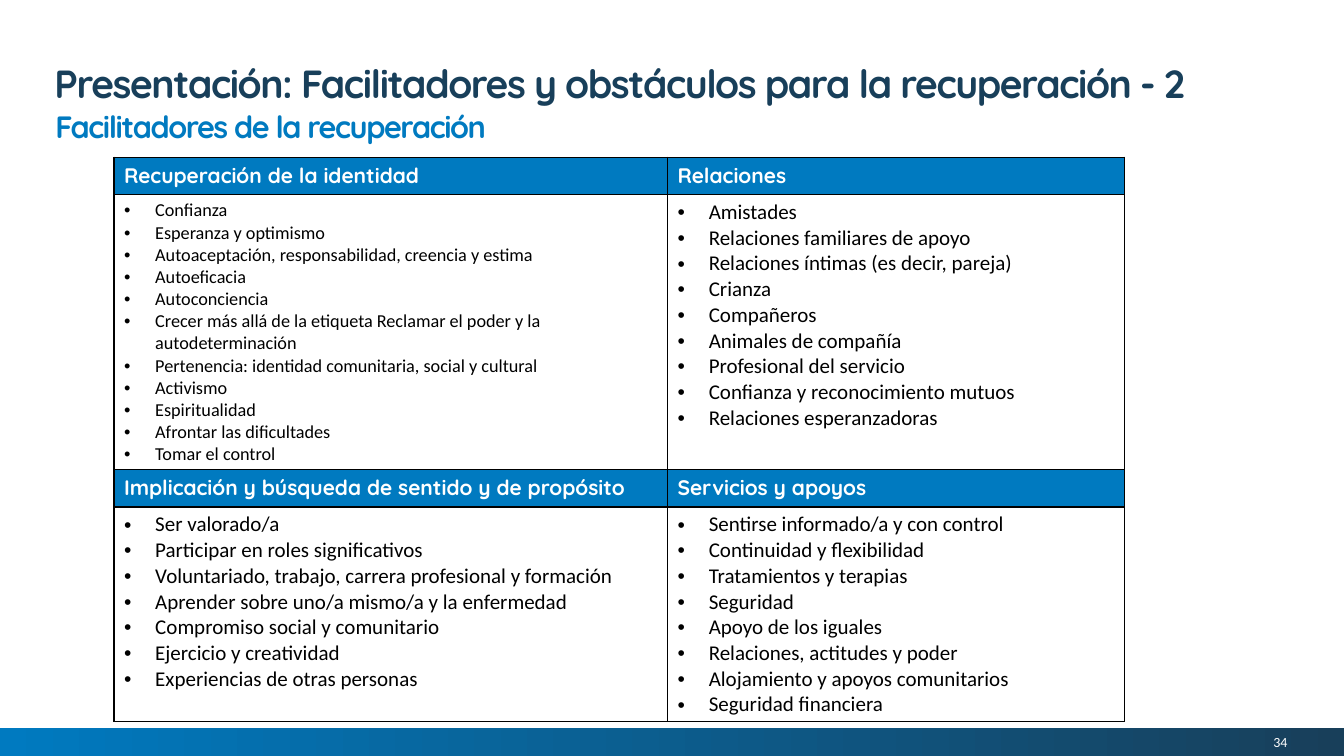
"""Builds the slide on facilitators of recovery."""
from lxml.etree import SubElement
from pptx import Presentation
from pptx.dml.color import RGBColor
from pptx.enum.shapes import MSO_SHAPE
from pptx.enum.text import MSO_ANCHOR, PP_ALIGN
from pptx.oxml.ns import qn
from pptx.util import Inches, Pt

BLUE = RGBColor(0x00, 0x7A, 0xC0)
NAVY = RGBColor(0x18, 0x3F, 0x5A)
WHITE = RGBColor(0xFF, 0xFF, 0xFF)
BLACK = RGBColor(0x00, 0x00, 0x00)

TITLE = "Presentación: Facilitadores y obstáculos para la recuperación - 2"
SUBTITLE = "Facilitadores de la recuperación"
PAGE_NUMBER = "34"
TOPICS = [
    [
        ("Recuperación de la identidad", 13, [
            "Confianza",
            "Esperanza y optimismo",
            "Autoaceptación, responsabilidad, creencia y estima",
            "Autoeficacia",
            "Autoconciencia",
            "Crecer más allá de la etiqueta Reclamar el poder y la autodeterminación",
            "Pertenencia: identidad comunitaria, social y cultural",
            "Activismo",
            "Espiritualidad",
            "Afrontar las dificultades",
            "Tomar el control",
        ]),
        ("Relaciones", 15, [
            "Amistades",
            "Relaciones familiares de apoyo",
            "Relaciones íntimas (es decir, pareja)",
            "Crianza",
            "Compañeros",
            "Animales de compañía",
            "Profesional del servicio",
            "Confianza y reconocimiento mutuos",
            "Relaciones esperanzadoras",
        ]),
    ],
    [
        ("Implicación y búsqueda de sentido y de propósito", 15, [
            "Ser valorado/a",
            "Participar en roles significativos",
            "Voluntariado, trabajo, carrera profesional y formación",
            "Aprender sobre uno/a mismo/a y la enfermedad",
            "Compromiso social y comunitario",
            "Ejercicio y creatividad",
            "Experiencias de otras personas",
        ]),
        ("Servicios y apoyos", 15, [
            "Sentirse informado/a y con control",
            "Continuidad y flexibilidad",
            "Tratamientos y terapias",
            "Seguridad",
            "Apoyo de los iguales",
            "Relaciones, actitudes y poder",
            "Alojamiento y apoyos comunitarios",
            "Seguridad financiera",
        ]),
    ],
]
COLUMN_WIDTHS = [5.49, 4.53]
ROW_HEIGHTS = [0.37, 2.73, 0.37, 2.13]


def write(frame, lines, size, color, font="Calibri", bold=False, bullet=False,
          spacing=None, leading=None, align=PP_ALIGN.LEFT):
    """Fill a text frame with one paragraph per line."""
    for index, line in enumerate(lines):
        para = frame.add_paragraph() if index else frame.paragraphs[0]
        para.alignment = align
        if leading:
            para.line_spacing = Pt(leading)
        if bullet:
            properties = para._p.get_or_add_pPr()
            properties.set("marL", str(Inches(0.31)))
            properties.set("indent", str(Inches(-0.31)))
            SubElement(properties, qn("a:buFont"), typeface="Arial")
            SubElement(properties, qn("a:buChar"), char="•")
        span = para.add_run()
        span.text = line
        span.font.name = font
        span.font.size = Pt(size)
        span.font.bold = bold
        span.font.color.rgb = color
        if spacing:
            span._r.get_or_add_rPr().set("spc", str(spacing))


def add_text(page, text, left, top, width, height, anchor, inset=True, **style):
    """Place a wrapped text box."""
    box = page.shapes.add_textbox(Inches(left), Inches(top), Inches(width), Inches(height))
    frame = box.text_frame
    frame.word_wrap = True
    frame.vertical_anchor = anchor
    if not inset:
        frame.margin_left = frame.margin_right = 0
        frame.margin_top = frame.margin_bottom = 0
    write(frame, [text], **style)


def outline(cell):
    """Give a cell thin black borders."""
    properties = cell._tc.get_or_add_tcPr()
    for index, side in enumerate(("a:lnL", "a:lnR", "a:lnT", "a:lnB")):
        border = properties.makeelement(qn(side), {"w": str(Pt(1))})
        fill = SubElement(border, qn("a:solidFill"))
        SubElement(fill, qn("a:srgbClr"), val=str(BLACK))
        properties.insert(index, border)


def add_topics(page):
    """Draw the table of headings and bulleted lists."""
    table = page.shapes.add_table(
        len(ROW_HEIGHTS), len(COLUMN_WIDTHS), Inches(1.13), Inches(1.56),
        Inches(sum(COLUMN_WIDTHS)), Inches(sum(ROW_HEIGHTS))).table
    for column, width in zip(table.columns, COLUMN_WIDTHS):
        column.width = Inches(width)
    for row, height in zip(table.rows, ROW_HEIGHTS):
        row.height = Inches(height)
    for band, topics in enumerate(TOPICS):
        for column, (heading, size, items) in enumerate(topics):
            head, body = (table.cell(2 * band + step, column) for step in (0, 1))
            for cell, color in ((head, BLUE), (body, WHITE)):
                cell.fill.solid()
                cell.fill.fore_color.rgb = color
                outline(cell)
            write(head.text_frame, [heading], 15, WHITE, font="Quicksand", bold=True)
            write(body.text_frame, items, size, BLACK, bullet=True)


def main():
    """Build and save the deck."""
    deck = Presentation()
    deck.slide_width, deck.slide_height = Inches(13.33), Inches(7.5)
    page = deck.slides.add_slide(deck.slide_layouts[6])

    footer = page.shapes.add_shape(
        MSO_SHAPE.RECTANGLE, 0, Inches(7.22), deck.slide_width, Inches(0.28))
    footer.shadow.inherit = False
    footer.line.fill.background()
    footer.fill.gradient()
    footer.fill.gradient_angle = 0
    for stop, color, position in zip(footer.fill.gradient_stops, (BLUE, NAVY), (0, 1)):
        stop.color.rgb = color
        stop.position = position

    add_text(page, PAGE_NUMBER, 10.97, 7.24, 1.8, 0.24, MSO_ANCHOR.MIDDLE, inset=False,
             size=10, color=WHITE, align=PP_ALIGN.RIGHT)
    heading = dict(font="Quicksand", bold=True, spacing=-100, leading=33)
    add_text(page, SUBTITLE, 0.55, 1.04, 12.22, 0.39, MSO_ANCHOR.BOTTOM, inset=False,
             size=22, color=BLUE, **heading)
    add_topics(page)
    add_text(page, TITLE, 0.44, 0.55, 12.41, 0.51, MSO_ANCHOR.TOP,
             size=28, color=NAVY, **heading)
    deck.save("out.pptx")


if __name__ == "__main__":
    main()
